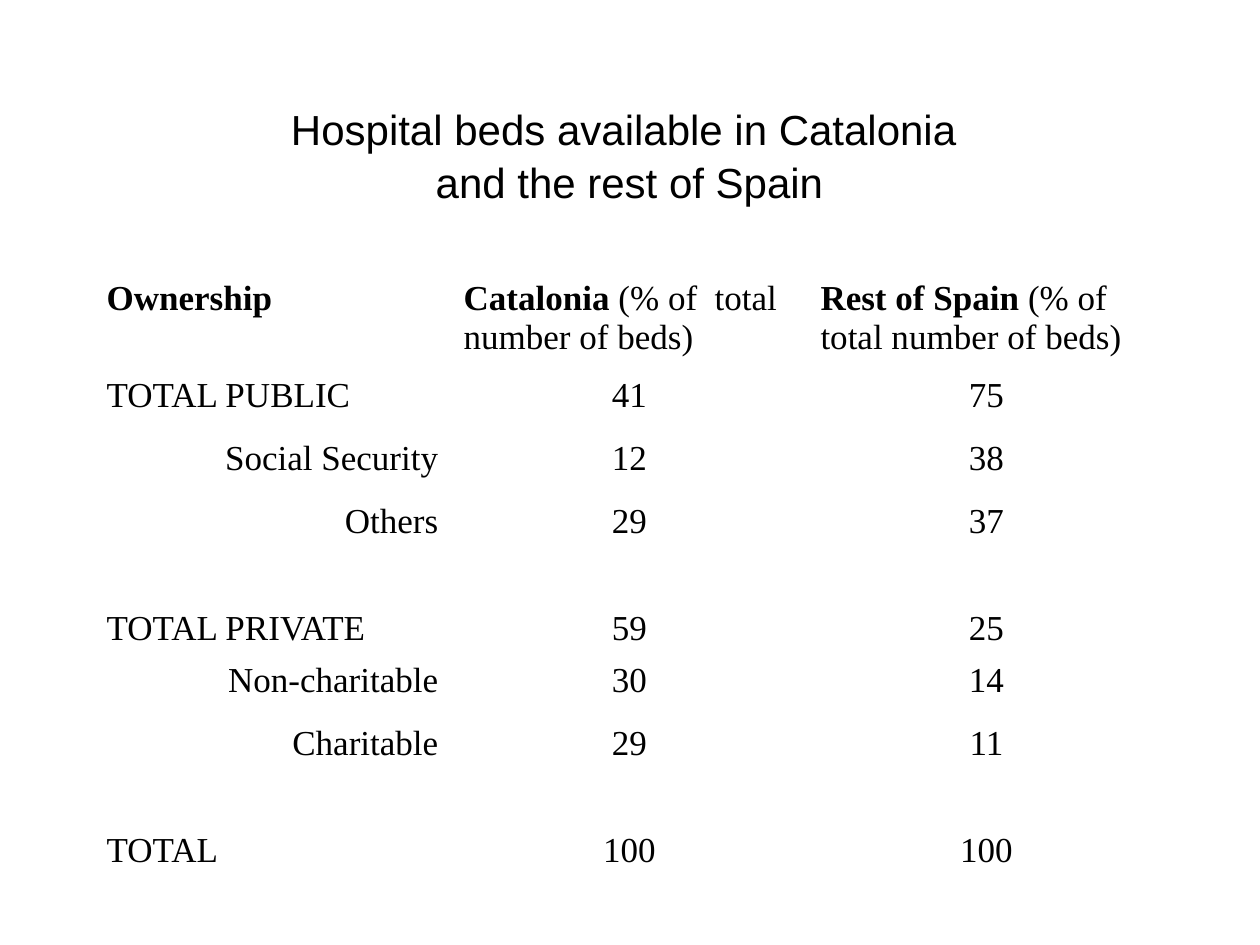
from pptx import Presentation
from pptx import util as u
from pptx.dml.color import RGBColor
from pptx.enum import text

PX = u.Inches(1) // 126
BLACK = RGBColor(0, 0, 0)
LEFT, CENTER, RIGHT = text.PP_ALIGN.LEFT, text.PP_ALIGN.CENTER, text.PP_ALIGN.RIGHT

HEADINGS = [
    [("Ownership", True)],
    [("Catalonia", True), (" (% of  total number of beds)", False)],
    [("Rest of Spain", True), (" (% of total number of beds)", False)],
]
HEADING_HEIGHT, ROW_HEIGHT, GROUP_HEIGHT = 90, 63, 96
BEDS = [
    ("TOTAL PUBLIC", 41, 75, LEFT, ROW_HEIGHT),
    ("Social Security", 12, 38, RIGHT, ROW_HEIGHT),
    ("Others", 29, 37, RIGHT, ROW_HEIGHT),
    ("TOTAL PRIVATE", 59, 25, LEFT, GROUP_HEIGHT),
    ("Non-charitable", 30, 14, RIGHT, ROW_HEIGHT),
    ("Charitable", 29, 11, RIGHT, ROW_HEIGHT),
    ("TOTAL", 100, 100, LEFT, GROUP_HEIGHT),
]


def add_run(paragraph, words, font, size, bold=False):
    run = paragraph.add_run()
    run.text = words
    run.font.name = font
    run.font.size = u.Pt(size)
    run.font.bold = bold
    run.font.color.rgb = BLACK


def add_title(slide, left, top, width, height):
    title = slide.shapes.add_textbox(left * PX, top * PX, width * PX, height * PX)
    frame = title.text_frame
    frame.word_wrap = True
    frame.vertical_anchor = text.MSO_ANCHOR.MIDDLE
    heading = frame.paragraphs[0]
    heading.alignment = CENTER
    heading.line_spacing = 1.06
    add_run(heading, "Hospital beds available in Catalonia ", "Arial", 24)
    heading.add_line_break()
    add_run(heading, "and the rest of Spain", "Arial", 24)


def fill_cell(cell, runs, alignment, anchor):
    cell.fill.background()
    cell.vertical_anchor = anchor
    paragraph = cell.text_frame.paragraphs[0]
    paragraph.alignment = alignment
    for words, bold in runs:
        add_run(paragraph, words, "Times New Roman", 20, bold)


def add_beds_table(slide, left, top, width):
    heights = [HEADING_HEIGHT] + [row[-1] for row in BEDS]
    beds = slide.shapes.add_table(
        len(heights), len(HEADINGS), left * PX, top * PX, width * PX, sum(heights) * PX
    ).table
    beds.first_row = beds.horz_banding = False
    for column in beds.columns:
        column.width = width * PX // len(HEADINGS)
    for row, height in zip(beds.rows, heights):
        row.height = height * PX

    for column, runs in enumerate(HEADINGS):
        fill_cell(beds.cell(0, column), runs, LEFT, text.MSO_ANCHOR.TOP)
    for row, (owner, catalonia, spain, alignment, height) in enumerate(BEDS, 1):
        anchor = text.MSO_ANCHOR.BOTTOM if height == GROUP_HEIGHT else text.MSO_ANCHOR.TOP
        fill_cell(beds.cell(row, 0), [(owner, False)], alignment, anchor)
        for column, share in enumerate((catalonia, spain), 1):
            fill_cell(beds.cell(row, column), [(str(share), False)], CENTER, anchor)


def main():
    deck = Presentation()
    deck.slide_width, deck.slide_height = 1260 * PX, 945 * PX
    slide = deck.slides.add_slide(deck.slide_layouts[6])
    add_title(slide, 94, 84, 1071, 140)
    add_beds_table(slide, 94, 273, 1071)
    deck.save("out.pptx")


if __name__ == "__main__":
    main()
